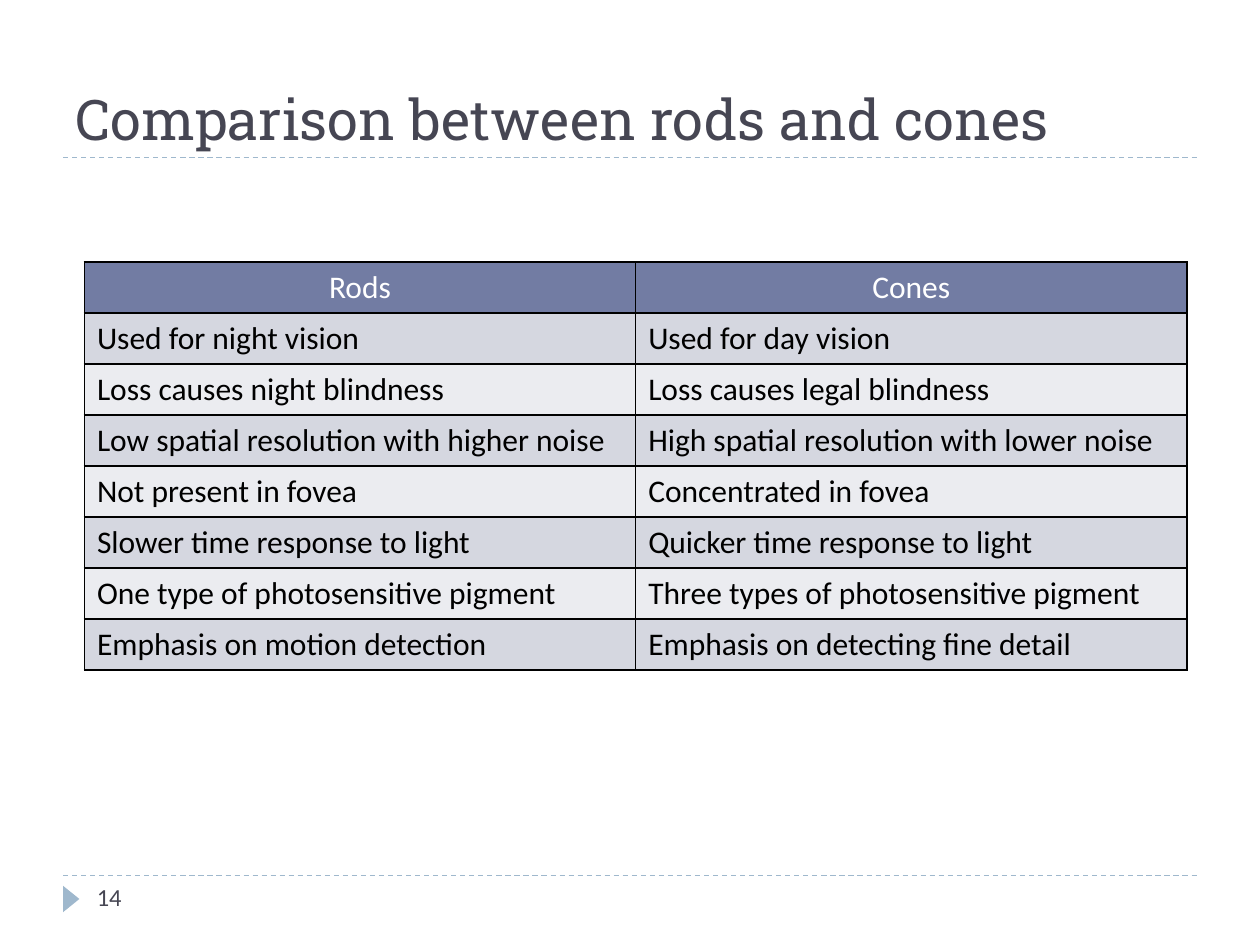
import dataclasses

import lxml.etree
import pptx
import pptx.dml.color
import pptx.enum.dml
import pptx.enum.shapes
import pptx.enum.text
import pptx.oxml.ns
import pptx.util

Inches = pptx.util.Inches
Pt = pptx.util.Pt
qn = pptx.oxml.ns.qn
ALIGN = pptx.enum.text.PP_ALIGN
ANCHOR = pptx.enum.text.MSO_ANCHOR

ROWS = [
    ("Rods", "Cones"),
    ("Used for night vision", "Used for day vision"),
    ("Loss causes night blindness", "Loss causes legal blindness"),
    ("Low spatial resolution with higher noise", "High spatial resolution with lower noise"),
    ("Not present in fovea", "Concentrated in fovea"),
    ("Slower time response to light", "Quicker time response to light"),
    ("One type of photosensitive pigment", "Three types of photosensitive pigment"),
    ("Emphasis on motion detection", "Emphasis on detecting fine detail"),
]


@dataclasses.dataclass(frozen=True)
class Theme:
    heading_font: str = "Roboto Slab"
    body_font: str = "Calibri"
    title_size: int = 32
    table_size: int = 18
    number_size: int = 14
    dark: str = "464653"
    accent: str = "9FB8CD"
    header_fill: str = "727CA3"
    header_text: str = "FFFFFF"
    body_text: str = "000000"
    border: str = "000000"
    bands: tuple = ("D5D7E0", "EBECF0")


def rgb(color):
    return pptx.dml.color.RGBColor.from_string(color)


class SlideBuilder:
    def __init__(self, slide, theme):
        self.slide = slide
        self.theme = theme

    def add_run(self, frame, text, font, size, color, align=ALIGN.LEFT):
        paragraph = frame.paragraphs[0]
        paragraph.alignment = align
        run = paragraph.add_run()
        run.text = text
        run.font.name = font
        run.font.size = Pt(size)
        run.font.color.rgb = rgb(color)
        run.font.bold = False  # the header row of the table style is bold

    def text(self, text, left, top, width, height, font, size, anchor=ANCHOR.TOP):
        box = self.slide.shapes.add_textbox(
            Inches(left), Inches(top), Inches(width), Inches(height))
        box.text_frame.word_wrap = True
        box.text_frame.vertical_anchor = anchor
        self.add_run(box.text_frame, text, font, size, self.theme.dark)

    def dashed_rule(self, y):
        rule = self.slide.shapes.add_connector(
            pptx.enum.shapes.MSO_CONNECTOR.STRAIGHT,
            Inches(0.5), Inches(y), Inches(9.5), Inches(y))
        rule.line.color.rgb = rgb(self.theme.accent)
        rule.line.width = Pt(0.75)
        rule.line.dash_style = pptx.enum.dml.MSO_LINE.DASH
        lxml.etree.SubElement(rule._element.spPr, qn("a:effectLst"))

    def page_marker(self, left, top, width, height):
        marker = self.slide.shapes.add_shape(
            pptx.enum.shapes.MSO_SHAPE.ISOSCELES_TRIANGLE,
            Inches(left), Inches(top), Inches(width), Inches(height))
        marker.rotation = 90
        marker.shadow.inherit = False
        marker.fill.solid()
        marker.fill.fore_color.rgb = rgb(self.theme.accent)
        marker.line.fill.background()

    def cell_borders(self, cell):
        properties = cell._tc.get_or_add_tcPr()
        for index, side in enumerate(("a:lnL", "a:lnR", "a:lnT", "a:lnB")):
            line = lxml.etree.Element(qn(side), w=str(Pt(1)))
            fill = lxml.etree.SubElement(line, qn("a:solidFill"))
            lxml.etree.SubElement(fill, qn("a:srgbClr"), val=self.theme.border)
            properties.insert(index, line)  # borders come before the fill

    def table(self, rows, left, top, width, height):
        theme = self.theme
        table = self.slide.shapes.add_table(
            len(rows), len(rows[0]),
            Inches(left), Inches(top), Inches(width), Inches(height)).table
        for row_index, row in enumerate(rows):
            if row_index == 0:
                fill, color, align = theme.header_fill, theme.header_text, ALIGN.CENTER
            else:
                fill = theme.bands[(row_index - 1) % 2]
                color, align = theme.body_text, ALIGN.LEFT
            for column_index, text in enumerate(row):
                cell = table.cell(row_index, column_index)
                cell.fill.solid()
                cell.fill.fore_color.rgb = rgb(fill)
                self.cell_borders(cell)
                self.add_run(cell.text_frame, text, theme.body_font,
                             theme.table_size, color, align)


def main():
    presentation = pptx.Presentation()
    presentation.slide_width = Inches(10)
    presentation.slide_height = Inches(7.5)
    slide = presentation.slides.add_slide(presentation.slide_layouts[6])
    theme = Theme()
    builder = SlideBuilder(slide, theme)

    for y in (6.95, 1.25):
        builder.dashed_rule(y)
    builder.page_marker(0.46, 7.07, 0.21, 0.13)
    builder.text("Comparison between rods and cones", 0.5, 0.25, 9, 1,
                 theme.heading_font, theme.title_size, ANCHOR.BOTTOM)
    builder.text("14", 0.67, 6.95, 2.17, 0.4, theme.body_font, theme.number_size)
    builder.table(ROWS, 0.67, 2.08, 8.75, 3.24)

    presentation.save("out.pptx")


if __name__ == "__main__":
    main()
